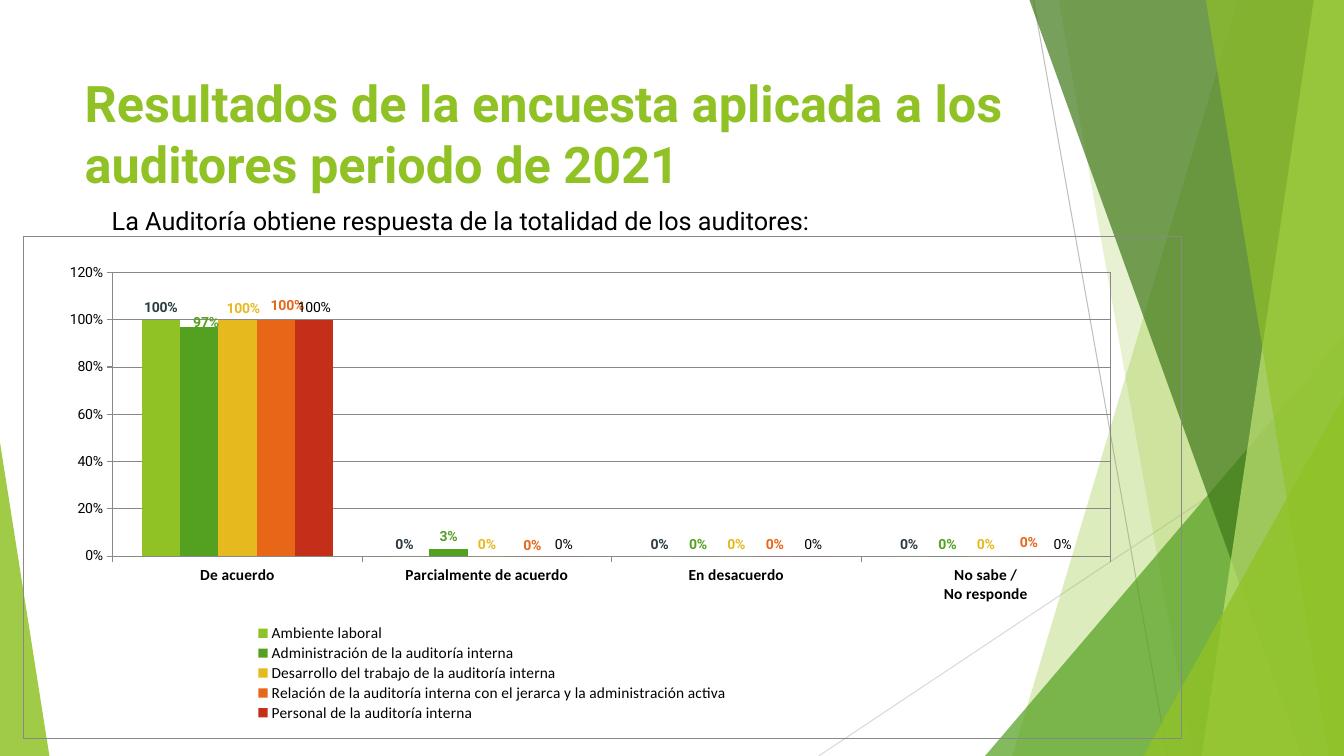
from lxml import etree
from pptx import Presentation
from pptx.chart.data import CategoryChartData
from pptx.dml.color import RGBColor
from pptx.enum.chart import XL_CHART_TYPE, XL_LABEL_POSITION, XL_LEGEND_POSITION, XL_TICK_MARK
from pptx.enum.shapes import MSO_CONNECTOR, MSO_SHAPE
from pptx.enum.text import MSO_ANCHOR, PP_ALIGN
from pptx.oxml import parse_xml
from pptx.oxml.ns import nsdecls, qn
from pptx.util import Inches, Pt

COLUMNS = XL_CHART_TYPE.COLUMN_CLUSTERED
OUTSIDE_END = XL_LABEL_POSITION.OUTSIDE_END
LEGEND_RIGHT = XL_LEGEND_POSITION.RIGHT
TICK_OUT = XL_TICK_MARK.OUTSIDE
STRAIGHT = MSO_CONNECTOR.STRAIGHT
TRIANGLE = MSO_SHAPE.ISOSCELES_TRIANGLE
TOP = MSO_ANCHOR.TOP
LEFT = PP_ALIGN.LEFT

WIDTH, HEIGHT = 13.33, 7.5
COLORS = {
    "lime": "90C226", "green": "54A021", "forest": "3F7819", "pale": "C0E474",
    "gold": "E6B91E", "orange": "E76618", "red": "C42F1A", "slate": "2C3C43",
    "black": "000000", "frame": "888888", "ray": "BFBFBF", "soft_ray": "D9D9D9",
}
RAYS = [((10.25, 0), (11.58, HEIGHT), "ray"), ((WIDTH, 4.03), (8.12, HEIGHT), "soft_ray")]
BACK_RIBBONS = [(12.28, 10.04, "lime", 30), (10.5, 11.83, "lime", 20)]
FRONT_RIBBONS = [(10.21, 12.91, "forest", 70), (13.03, 11.92, "pale", 70),
                 (11.96, 13.18, "lime", 65)]
CATEGORIES = ["De acuerdo", "Parcialmente de acuerdo", "En desacuerdo", "No sabe /\nNo responde"]
SERIES = [
    ("Ambiente laboral", (1, 0, 0, 0), "lime", "slate", {1: (-0.005, 0)}),
    ("Administración de la auditoría interna", (0.97, 0.03, 0, 0), "green", "green",
     {0: (0.006, 0.016)}),
    ("Desarrollo del trabajo de la auditoría interna", (1, 0, 0, 0), "gold", "gold",
     {0: (0.005, 0.002)}),
    ("Relación de la auditoría interna con el jerarca y la administración activa",
     (1, 0, 0, 0), "orange", "orange", {0: (0.01, -0.004), 1: (0.006, 0.002), 3: (0.004, -0.004)}),
    ("Personal de la auditoría interna", (1, 0, 0, 0), "red", "black", {}),
]


def rgb(name):
    """Return the named colour."""
    return RGBColor.from_string(COLORS[name])


def set_font(font, color="black", **values):
    """Apply a colour and a set of format values to a font."""
    font.color.rgb = rgb(color)
    for name, value in values.items():
        setattr(font, name, value)


def paint(shape, color, opacity):
    """Fill a borderless shape with a translucent colour."""
    shape.shadow.inherit = False
    shape.line.fill.background()
    shape.fill.solid()
    shape.fill.fore_color.rgb = rgb(color)
    fill_color = shape.fill._xPr.find(".//" + qn("a:srgbClr"))
    etree.SubElement(fill_color, qn("a:alpha"), val=str(opacity * 1000))


def add_ribbons(page, ribbons):
    """Draw panels that run from a slanted edge to the right of the page."""
    for top_x, bottom_x, color, opacity in ribbons:
        corners = [(WIDTH, 0), (WIDTH, HEIGHT), (bottom_x, HEIGHT)]
        builder = page.shapes.build_freeform(Inches(top_x), 0)
        builder.add_line_segments([(Inches(x), Inches(y)) for x, y in corners])
        paint(builder.convert_to_shape(), color, opacity)


def add_triangle(page, left, top, width, apex, color, opacity):
    """Draw a triangle that stands on the bottom of the page."""
    box = (left, top, width, HEIGHT - top)
    shape = page.shapes.add_shape(TRIANGLE, *map(Inches, box))
    shape.adjustments[0] = apex
    paint(shape, color, opacity)


def add_backdrop(page):
    """Draw the rays and the green facets around the page."""
    for start, end, color in RAYS:
        ray = page.shapes.add_connector(STRAIGHT, *map(Inches, start + end))
        ray.line.color.rgb = rgb(color)
        ray.line.width = Pt(0.75)
        etree.SubElement(ray._element.spPr, qn("a:effectLst"))
    add_ribbons(page, BACK_RIBBONS)
    add_triangle(page, 9.77, 3.33, 3.56, 1, "green", 72)
    add_ribbons(page, FRONT_RIBBONS)
    add_triangle(page, 11.34, 3.93, 1.99, 1, "lime", 80)
    add_triangle(page, 0, 4.39, 0.49, 0, "lime", 85)


def add_text(shape, box, text, **values):
    """Place a text shape in its box and format its words."""
    shape.left, shape.top, shape.width, shape.height = map(Inches, box)
    frame = shape.text_frame
    frame.word_wrap = True
    frame.vertical_anchor = TOP
    para = frame.paragraphs[0]
    para.alignment = LEFT
    span = para.add_run()
    span.text = text
    set_font(span.font, name="Roboto", **values)


def make_layout(target=None, **places):
    """Build a manual chart layout from fractions of the chart."""
    parts = f'<c:layoutTarget val="{target}"/>' if target else ""
    if "w" in places:
        parts += '<c:xMode val="edge"/><c:yMode val="edge"/>'
    parts += "".join(f'<c:{name} val="{value}"/>' for name, value in places.items())
    return parse_xml(f'<c:layout {nsdecls("c")}><c:manualLayout>{parts}</c:manualLayout></c:layout>')


def make_frame(color):
    """Build unfilled chart area properties with a thin border."""
    return parse_xml(
        f'<c:spPr {nsdecls("c", "a")}><a:noFill/><a:ln w="9525"><a:solidFill>'
        f'<a:srgbClr val="{COLORS[color]}"/></a:solidFill></a:ln></c:spPr>')


def format_series(series, color, label_color, shifts):
    """Colour a series and place its percentage labels."""
    series.format.fill.solid()
    series.format.fill.fore_color.rgb = rgb(color)
    label_font = {"color": label_color, "size": Pt(10), "name": "Roboto",
                  "bold": label_color != "black"}
    labels = series.data_labels
    label_format = {"show_value": True, "number_format": "0%",
                    "number_format_is_linked": False, "position": OUTSIDE_END}
    for name, value in label_format.items():
        setattr(labels, name, value)
    set_font(labels.font, **label_font)
    for index, (x, y) in shifts.items():
        label = series.points[index].data_label
        set_font(label.font, **label_font)
        label.position = OUTSIDE_END
        element = labels._element.find(f'{qn("c:dLbl")}[{qn("c:idx")}][@val]')
        for element in labels._element.findall(qn("c:dLbl")):
            position = element.find(qn("c:idx"))
            if position.get("val") == str(index):
                position.addnext(make_layout(x=x, y=y))


def format_axes(chart):
    """Format the axes and the gridlines."""
    values, categories = chart.value_axis, chart.category_axis
    for axis in (values, categories):
        axis.major_tick_mark = TICK_OUT
        axis.format.line.color.rgb = rgb("frame")
    values.minimum_scale, values.maximum_scale, values.major_unit = 0, 1.2, 0.2
    values.tick_labels.number_format = "0%"
    values.tick_labels.number_format_is_linked = False
    values.major_gridlines.format.line.color.rgb = rgb("frame")
    set_font(values.tick_labels.font, name="Roboto", size=Pt(10))
    set_font(categories.tick_labels.font, name="Calibri", size=Pt(11), bold=True)


def add_survey_chart(page, box):
    """Draw the clustered columns of the survey answers."""
    data = CategoryChartData(number_format="0%")
    data.categories = CATEGORIES
    for name, values, *_ in SERIES:
        data.add_series(name, values)
    chart = page.shapes.add_chart(COLUMNS, *map(Inches, box), data).chart
    set_font(chart.font, name="Roboto", size=Pt(10))
    chart.has_title = False
    plot = chart.plots[0]
    plot.gap_width, plot.overlap, plot.vary_by_categories = 150, 0, False
    for series, (_, _, *style) in zip(plot.series, SERIES):
        format_series(series, *style)
    format_axes(chart)

    chart.has_legend = True
    legend = chart.legend
    legend.position = LEGEND_RIGHT
    legend.include_in_layout = False
    set_font(legend.font, name="Calibri", size=Pt(11))
    legend._element.find(qn("c:legendPos")).addnext(make_layout(x=0.18, y=0.77, w=0.45, h=0.2))

    space = chart._chartSpace
    space.find(qn("c:txPr")).addprevious(make_frame("frame"))
    area = space.chart.plotArea
    for old in area.findall(qn("c:layout")):
        area.remove(old)
    area.insert(0, make_layout("inner", x=0.077, y=0.072, w=0.862, h=0.565))
    area.append(make_frame("frame"))


def main():
    """Build the survey results slide."""
    deck = Presentation()
    deck.slide_width, deck.slide_height = Inches(WIDTH), Inches(HEIGHT)
    page = deck.slides.add_slide(deck.slide_layouts[5])
    add_backdrop(page)
    add_text(page.shapes.title, (0.74, 0.67, 9.4, 1.44),
             "Resultados de la encuesta aplicada a los auditores periodo de 2021",
             color="lime", size=Pt(36), bold=True)
    add_text(page.shapes.add_textbox(0, 0, 0, 0), (1.01, 1.99, 9.91, 1.01),
             "La Auditoría obtiene respuesta de la totalidad de los auditores:", size=Pt(18))
    add_survey_chart(page, (0.23, 2.34, 11.49, 4.99))
    deck.save("out.pptx")


if __name__ == "__main__":
    main()
